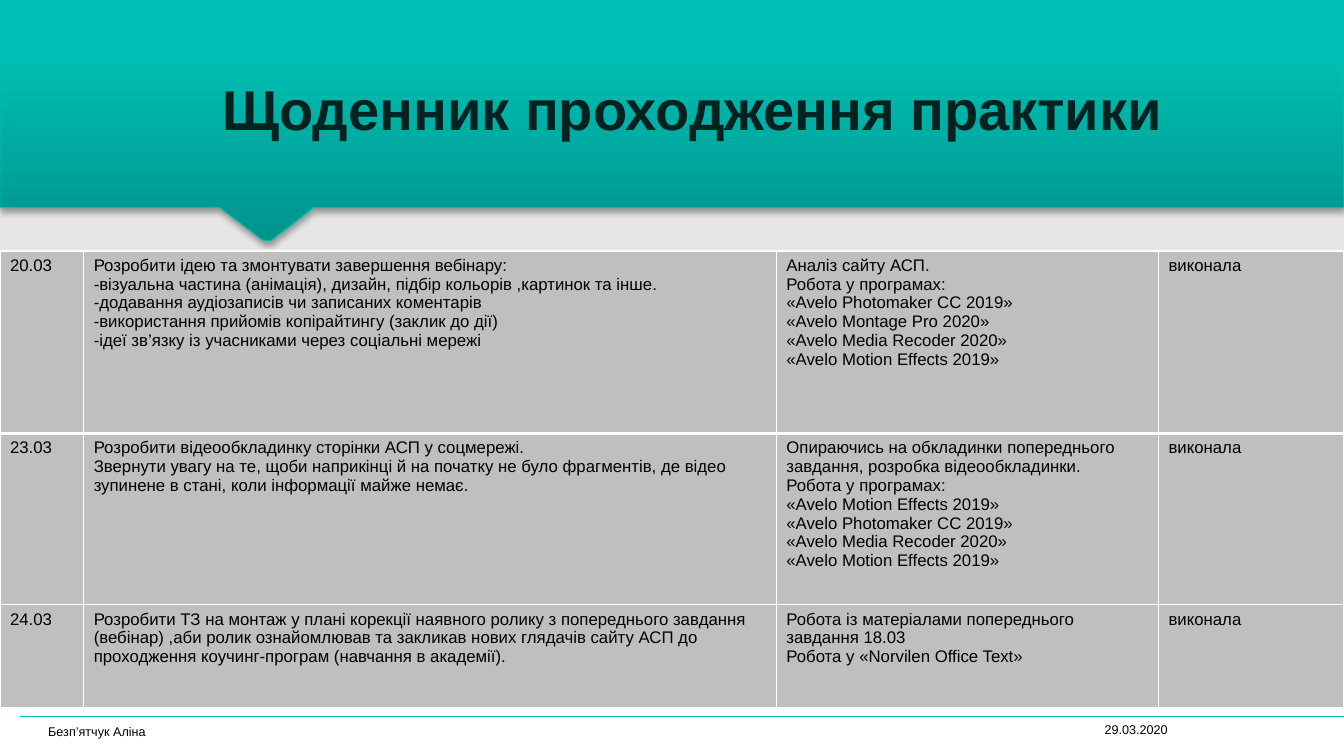
from dataclasses import dataclass
from typing import NamedTuple

from lxml.etree import SubElement
from pptx import Presentation
from pptx.dml.color import RGBColor
from pptx.enum.shapes import MSO_CONNECTOR as Connector
from pptx.enum.text import MSO_ANCHOR as Anchor, PP_ALIGN as Align
from pptx.oxml.ns import qn
from pptx.util import Inches, Pt

FONT = "Arial"
COLORS = {
    "teal": "00C2B7", "teal_dark": "00948C", "teal_mid": "00C0B5", "teal_top": "00C1B6",
    "title": "002220", "text": "000000", "cell": "BFBFBF", "border": "FFFFFF",
    "back_top": "DBDBDB", "back_bottom": "FFFFFF",
}
SLIDE_WIDTH, SLIDE_HEIGHT = 13.33, 7.5
BANNER = [(0, 0), (0, 2.06), (2.18, 2.06), (2.6, 2.38), (2.65, 2.39), (2.7, 2.38),
          (3.11, 2.06), (SLIDE_WIDTH, 2.06), (SLIDE_WIDTH, 0)]
TABLE_TOP = 2.49
COLUMN_WIDTHS = [0.83, 6.87, 3.79, 1.84]
DONE = "виконала"


@dataclass
class Label:
    text: str
    left: float
    top: float
    width: float
    height: float
    size: float
    align: Align
    color: str = "text"
    bold: bool = False


class DiaryEntry(NamedTuple):
    height: float
    bottom_border: float
    date: str
    task: str
    work: str
    status: str = DONE


LABELS = [
    Label("Щоденник проходження практики", 1.29, 0.4, 11.15, 1.06, 40, Align.CENTER, "title", True),
    Label("29.03.2020", 10.21, 6.96, 1.47, 0.4, 9, Align.RIGHT),
    Label("Безп’ятчук Аліна", 0.38, 6.98, 9.45, 0.4, 9, Align.LEFT),
]

# In cell text, \n starts a paragraph and \v breaks a line
ENTRIES = [
    DiaryEntry(
        1.81, 3, "20.03",
        "Розробити ідею та змонтувати завершення вебінару:\n"
        "-візуальна частина (анімація), дизайн, підбір кольорів ,картинок та інше.\n"
        "-додавання аудіозаписів чи записаних коментарів\n"
        "-використання прийомів копірайтингу (заклик до дії)\n"
        "-ідеї зв’язку із учасниками через соціальні мережі",
        "Аналіз сайту АСП.\nРобота у програмах:\n"
        "«Avelo Photomaker CC 2019»\v«Avelo Montage Pro 2020»\v"
        "«Avelo Media Recoder 2020»\v«Avelo Motion Effects 2019»"),
    DiaryEntry(
        1.7, 1, "23.03",
        "Розробити відеообкладинку сторінки АСП у соцмережі.\n"
        "Звернути увагу на те, щоби наприкінці й на початку не було фрагментів, "
        "де відео зупинене в стані, коли інформації майже немає.",
        "Опираючись на обкладинки попереднього завдання, розробка відеообкладинки.\n"
        "Робота у програмах:\n«Avelo Motion Effects 2019»\n"
        "«Avelo Photomaker CC 2019»\v«Avelo Media Recoder 2020»\v«Avelo Motion Effects 2019»"),
    DiaryEntry(
        1.02, 1, "24.03",
        "Розробити ТЗ на монтаж у плані корекції наявного ролику з попереднього завдання "
        "(вебінар) ,аби ролик ознайомлював та закликав нових глядачів сайту АСП до "
        "проходження коучинг-програм (навчання в академії).",
        "Робота із матеріалами попереднього завдання 18.03\nРобота у «Norvilen Office Text»"),
]


def rgb(name: str) -> RGBColor:
    return RGBColor.from_string(COLORS[name])


def add_color(parent, name: str):
    return SubElement(parent, qn("a:srgbClr"), val=COLORS[name])


def set_gradient(fill, element, angle: float, stops: list[tuple[int, str]]) -> None:
    fill.gradient()
    fill.gradient_angle = angle
    stop_list = element.find(".//" + qn("a:gsLst"))
    for old_stop in list(stop_list):
        stop_list.remove(old_stop)
    for percent, name in stops:
        add_color(SubElement(stop_list, qn("a:gs"), pos=str(percent * 1000)), name)


def add_shadow(effects, blur: float, distance: float, opacity: int) -> None:
    shadow = SubElement(effects, qn("a:outerShdw"), blurRad=str(Pt(blur)),
                        dist=str(Pt(distance)), dir="5400000", rotWithShape="0")
    SubElement(add_color(shadow, "text"), qn("a:alpha"), val=str(opacity * 1000))


def style_text(paragraph, size: float, color: str = "text", bold: bool = False) -> None:
    font = paragraph.font
    font.name, font.size, font.bold = FONT, Pt(size), bold
    font.color.rgb = rgb(color)


def add_banner(slide) -> None:
    points = [(Inches(x), Inches(y)) for x, y in BANNER]
    builder = slide.shapes.build_freeform(*points[0])
    builder.add_line_segments(points[1:], close=True)
    banner = builder.convert_to_shape()
    set_gradient(banner.fill, banner._element, 90,
                 [(0, "teal_dark"), (80, "teal_mid"), (100, "teal_top")])
    banner.line.color.rgb = rgb("teal")
    banner.line.width = Pt(0.75)
    banner.shadow.inherit = False
    add_shadow(banner._element.spPr.find(qn("a:effectLst")), 3.1, 1.8, 35)


def add_footer_line(slide) -> None:
    line = slide.shapes.add_connector(Connector.STRAIGHT, Inches(0.2), Inches(7.11),
                                      Inches(SLIDE_WIDTH), Inches(7.11))
    line.line.color.rgb = rgb("teal")
    line.line.width = Pt(0.75)
    SubElement(line._element.spPr, qn("a:effectLst"))


def add_label(slide, label: Label):
    box = slide.shapes.add_textbox(Inches(label.left), Inches(label.top),
                                   Inches(label.width), Inches(label.height))
    frame = box.text_frame
    frame.word_wrap = True
    frame.vertical_anchor = Anchor.BOTTOM
    frame.text = label.text
    paragraph = frame.paragraphs[0]
    paragraph.alignment = label.align
    style_text(paragraph, label.size, label.color, label.bold)
    return paragraph


def set_border(cell, side: str, width: float, position: int) -> None:
    properties = cell._tc.get_or_add_tcPr()
    border = SubElement(properties, qn(f"a:ln{side}"), w=str(Pt(width)))
    add_color(SubElement(border, qn("a:solidFill")), "border")
    properties.insert(position, border)


def add_diary(slide, entries: list[DiaryEntry]) -> None:
    heights = [entry.height for entry in entries]
    table = slide.shapes.add_table(
        len(entries), len(COLUMN_WIDTHS), 0, Inches(TABLE_TOP),
        Inches(sum(COLUMN_WIDTHS)), Inches(sum(heights))).table
    table.first_row = table.horz_banding = False
    for column, width in zip(table.columns, COLUMN_WIDTHS):
        column.width = Inches(width)
    top_border = 1
    for row, entry in zip(table.rows, entries):
        row.height = Inches(entry.height)
        texts = (entry.date, entry.task, entry.work, entry.status)
        borders = {"L": 1, "R": 1, "T": top_border, "B": entry.bottom_border}
        for cell, text in zip(row.cells, texts):
            cell.text = text
            for paragraph in cell.text_frame.paragraphs:
                style_text(paragraph, 12)
            cell.fill.solid()
            cell.fill.fore_color.rgb = rgb("cell")
            for position, (side, width) in enumerate(borders.items()):
                set_border(cell, side, width, position)
        top_border = entry.bottom_border


def main() -> None:
    presentation = Presentation()
    presentation.slide_width = Inches(SLIDE_WIDTH)
    presentation.slide_height = Inches(SLIDE_HEIGHT)
    slide = presentation.slides.add_slide(presentation.slide_layouts[6])

    # Background, footer line and banner
    set_gradient(slide.background.fill, slide._element, 270,
                 [(0, "back_top"), (100, "back_bottom")])
    add_footer_line(slide)
    add_banner(slide)

    # Title with a text shadow, then date and author
    title, *_ = [add_label(slide, label) for label in LABELS]
    run_properties = title.runs[0]._r.get_or_add_rPr()
    add_shadow(SubElement(run_properties, qn("a:effectLst")), 3, 2, 40)

    # Practice diary
    add_diary(slide, ENTRIES)
    presentation.save("out.pptx")


if __name__ == "__main__":
    main()
